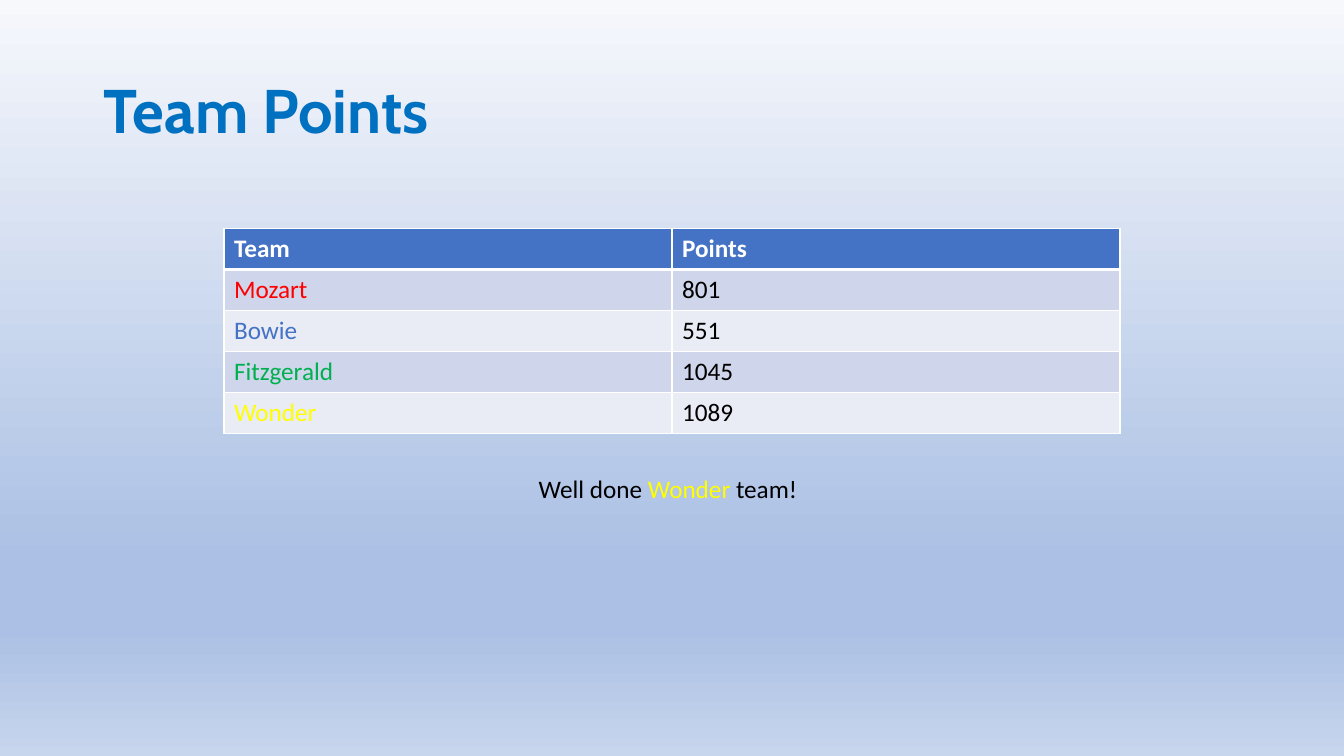
from copy import deepcopy
from dataclasses import dataclass

from lxml.etree import SubElement
from pptx import Presentation
from pptx.dml.color import RGBColor
from pptx.enum.text import MSO_ANCHOR as Anchor, MSO_AUTO_SIZE as AutoSize, PP_ALIGN as Align
from pptx.oxml.ns import qn
from pptx.util import Inches, Pt


@dataclass(frozen=True)
class Theme:
    heading_font: str = "Cabin"
    body_font: str = "Calibri"
    heading_size: int = 44
    body_size: int = 18
    heading: str = "0070C0"
    ink: str = "000000"
    white: str = "FFFFFF"
    header_fill: str = "4472C4"
    bands: tuple = ("CFD5EA", "E9EBF5")
    backdrop: tuple = ((0, "F6F8FC"), (0.74, "ABC0E4"), (0.83, "ABC0E4"), (1, "C7D5ED"))
    thin: int = 1
    thick: int = 3


TEAM_COLOURS = {"Mozart": "FF0000", "Bowie": "4472C4", "Fitzgerald": "00B050", "Wonder": "FFFF00"}
TEAM_POINTS = {"Mozart": 801, "Bowie": 551, "Fitzgerald": 1045, "Wonder": 1089}


def add_text(paragraph, text, *, font, size, colour, bold=False):
    run = paragraph.add_run()
    run.text = text
    run.font.name = font
    run.font.size = Pt(size)
    run.font.bold = bold
    run.font.color.rgb = RGBColor.from_string(colour)


def set_borders(cell, colour, **widths):
    """Draw cell edges; widths are points keyed by L, R, T and B, in that order."""
    properties = cell._tc.get_or_add_tcPr()
    for position, (side, width) in enumerate(widths.items()):
        edge = SubElement(properties, qn(f"a:ln{side}"), w=str(Pt(width)))
        SubElement(SubElement(edge, qn("a:solidFill")), qn("a:srgbClr"), val=colour)
        properties.insert(position, edge)


class SlideBuilder:
    """Places elements on a grid of 12 columns and 12 rows."""

    GRID = 12

    def __init__(self, deck, theme):
        self.theme = theme
        self.column = deck.slide_width / self.GRID
        self.row = deck.slide_height / self.GRID
        self.slide = deck.slides.add_slide(deck.slide_layouts[5])

    def box(self, left, top, width, height):
        return (round(left * self.column), round(top * self.row),
                round(width * self.column), round(height * self.row))

    def body_text(self, paragraph, text, colour, bold=False):
        add_text(paragraph, text, font=self.theme.body_font, size=self.theme.body_size,
                 colour=colour, bold=bold)

    def background(self):
        fill = self.slide.background.fill
        fill.gradient()
        fill.gradient_angle = 270
        stop_list = next(self.slide.background._cSld.iter(qn("a:gsLst")))
        while len(stop_list) < len(self.theme.backdrop):
            stop_list.append(deepcopy(stop_list[0]))
        for stop, (position, colour) in zip(fill.gradient_stops, self.theme.backdrop):
            stop.position = position
            stop.color.rgb = RGBColor.from_string(colour)

    def title(self, text, *place):
        heading = self.slide.shapes.title
        heading.left, heading.top, heading.width, heading.height = self.box(*place)
        heading.text_frame.vertical_anchor = Anchor.MIDDLE
        paragraph = heading.text_frame.paragraphs[0]
        paragraph.alignment = Align.LEFT
        paragraph.line_spacing = 0.9
        add_text(paragraph, text, font=self.theme.heading_font, size=self.theme.heading_size,
                 colour=self.theme.heading, bold=True)

    def table(self, rows, colours, *place):
        theme = self.theme
        grid = self.slide.shapes.add_table(len(rows), len(rows[0]), *self.box(*place)).table
        for r, values in enumerate(rows):
            is_header = r == 0
            fill = theme.header_fill if is_header else theme.bands[(r - 1) % 2]
            for c, value in enumerate(values):
                cell = grid.cell(r, c)
                cell.fill.solid()
                cell.fill.fore_color.rgb = RGBColor.from_string(fill)
                set_borders(cell, theme.white, L=theme.thin, R=theme.thin,
                            T=theme.thick if r == 1 else theme.thin,
                            B=theme.thick if is_header else theme.thin)
                colour = theme.white if is_header else colours.get(value, theme.ink)
                self.body_text(cell.text_frame.paragraphs[0], str(value), colour, is_header)

    def message(self, parts, *place):
        """Write one line from (text, colour) parts."""
        frame = self.slide.shapes.add_textbox(*self.box(*place)).text_frame
        frame.word_wrap = True
        frame.auto_size = AutoSize.SHAPE_TO_FIT_TEXT
        for text, colour in parts:
            self.body_text(frame.paragraphs[0], text, colour)


def main():
    deck = Presentation()
    deck.slide_width, deck.slide_height = Inches(13.33), Inches(7.5)
    theme = Theme()
    page = SlideBuilder(deck, theme)
    page.background()
    page.title("Team Points", 0.83, 0.64, 10.35, 2.32)
    page.table([("Team", "Points"), *TEAM_POINTS.items()], TEAM_COLOURS, 2, 3.63, 8, 3.25)
    winner = max(TEAM_POINTS, key=TEAM_POINTS.get)
    page.message([("Well done ", theme.ink), (f"{winner} ", TEAM_COLOURS[winner]),
                  ("team!", theme.ink)], 4.72, 7.44, 2.57, 0.64)
    deck.save("out.pptx")


if __name__ == "__main__":
    main()
